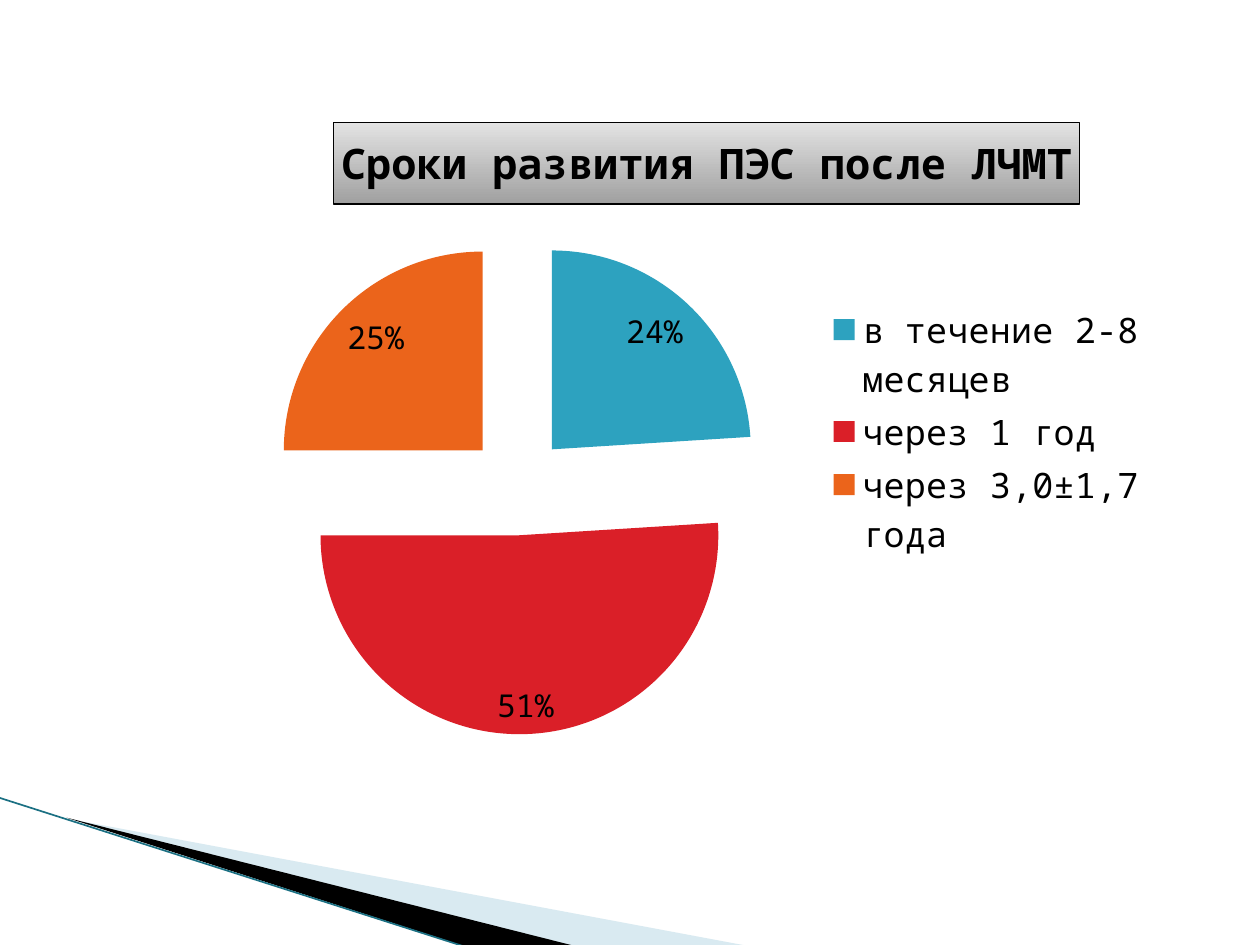
from typing import NamedTuple

from lxml import etree
from pptx import Presentation
from pptx.chart.data import CategoryChartData
from pptx.dml.color import RGBColor
from pptx.enum.chart import XL_CHART_TYPE, XL_LABEL_POSITION, XL_LEGEND_POSITION
from pptx.enum.shapes import MSO_CONNECTOR
from pptx.oxml import parse_xml
from pptx.oxml.ns import nsdecls, qn
from pptx.util import Inches, Pt

FONT = "Noto Sans Mono"
TITLE = "Сроки развития ПЭС после ЛЧМТ"


class Slice(NamedTuple):
    label: str
    share: float
    color: str


class Wedge(NamedTuple):
    points: list[tuple[float, float]]
    color: str
    opacity: int


SLICES = [
    Slice("в течение 2-8 месяцев", 0.24, "2DA2BF"),
    Slice("через 1 год", 0.51, "DA1F28"),
    Slice("через 3,0±1,7 года", 0.25, "EB641B"),
]
WEDGES = [
    Wedge([(0.55, 6.5), (5.95, 7.51), (4.56, 7.51)], "A0CBDC", 40),
    Wedge([(0.53, 6.49), (4.57, 7.51), (3.72, 7.52)], "000000", 100),
]


def rgb(color: str) -> RGBColor:
    return RGBColor.from_string(color)


def set_font(font, size: float, bold: bool = False) -> None:
    font.name, font.size, font.bold = FONT, Pt(size), bold
    font.color.rgb = rgb("000000")


def add_wedge(s, wedge: Wedge) -> None:
    start, *rest = [(Inches(x), Inches(y)) for x, y in wedge.points]
    builder = s.shapes.build_freeform(*start)
    builder.add_line_segments(rest, close=True)
    sp = builder.convert_to_shape()
    sp.shadow.inherit = False
    sp.line.fill.background()
    sp.fill.solid()
    sp.fill.fore_color.rgb = rgb(wedge.color)
    if wedge.opacity < 100:
        clr = sp.fill._xPr.find(f".//{qn('a:srgbClr')}")
        etree.SubElement(clr, qn("a:alpha"), val=str(wedge.opacity * 1000))


def add_edge_line(s) -> None:
    line = s.shapes.add_connector(
        MSO_CONNECTOR.STRAIGHT, Inches(-0.01), Inches(6.33), Inches(3.71), Inches(7.52))
    line.line.color.rgb = rgb("1B7083")
    line.line.width = Pt(0.95)
    etree.SubElement(line._element.spPr, qn("a:effectLst"))


def set_layout(element, after: str, inner: bool = False, **fractions: float) -> None:
    """Place a chart part by fractions of the chart; the layout follows the child named after."""
    for old in element.findall(qn("c:layout")):
        element.remove(old)
    target = '<c:layoutTarget val="inner"/>' if inner else ""
    modes = "".join(f'<c:{k}Mode val="edge"/>' for k in "xy")
    values = "".join(f'<c:{k} val="{v}"/>' for k, v in fractions.items())
    layout = parse_xml(f"<c:layout {nsdecls('c')}><c:manualLayout>{target}{modes}{values}"
                       "</c:manualLayout></c:layout>")
    previous = element.find(qn(after)) if after else None
    if previous is None:
        element.insert(0, layout)
    else:
        previous.addnext(layout)


def add_title(chart) -> None:
    chart.has_title = True
    title = chart.chart_title
    p = title.text_frame.paragraphs[0]
    p.text = TITLE
    set_font(p.font, 24, bold=True)
    title.include_in_layout = False
    fill = title.format.fill
    fill.gradient()
    fill.gradient_angle = 270
    for stop, color in zip(fill.gradient_stops, ("E3E3E3", "A0A0A0")):
        stop.color.rgb = rgb(color)
    title.format.line.color.rgb = rgb("000000")
    title.format.line.width = Pt(0.75)
    set_layout(title._element, "c:tx", x=0.13, y=0.01)


def add_pie(s) -> None:
    data = CategoryChartData(number_format="0%")
    data.categories = [item.label for item in SLICES]
    data.add_series(TITLE, [item.share for item in SLICES])
    chart = s.shapes.add_chart(XL_CHART_TYPE.PIE, Inches(1.67), Inches(0.92),
                               Inches(7.51), Inches(5.06), data).chart
    set_font(chart.font, 18)
    add_title(chart)

    chart.has_legend = True
    legend = chart.legend
    legend.position = XL_LEGEND_POSITION.RIGHT
    legend.include_in_layout = False
    set_font(legend.font, 20)
    set_layout(legend._element, "c:legendPos", x=0.65, y=0.29, w=0.34, h=0.41)

    plot = chart.plots[0]
    plot.vary_by_categories = True
    set_layout(chart._chartSpace.chart.plotArea, "", inner=True, x=0.06, y=0.19, w=0.53, h=0.78)
    series = plot.series[0]
    for i, item in enumerate(SLICES):
        fill = series.points[i].format.fill
        fill.solid()
        fill.fore_color.rgb = rgb(item.color)
    explosion = parse_xml(f'<c:explosion {nsdecls("c")} val="25"/>')
    series._element.find(qn("c:dPt")).addprevious(explosion)

    labels = series.data_labels
    labels.show_value = True
    labels.number_format, labels.number_format_is_linked = "0%", False
    labels.position = XL_LABEL_POSITION.INSIDE_END
    set_font(labels.font, 18)


def main() -> None:
    prs = Presentation()
    prs.slide_width, prs.slide_height = Inches(10), Inches(7.5)
    s = prs.slides.add_slide(prs.slide_layouts[6])
    for wedge in WEDGES:
        add_wedge(s, wedge)
    add_edge_line(s)
    add_pie(s)
    prs.save("out.pptx")


if __name__ == "__main__":
    main()
